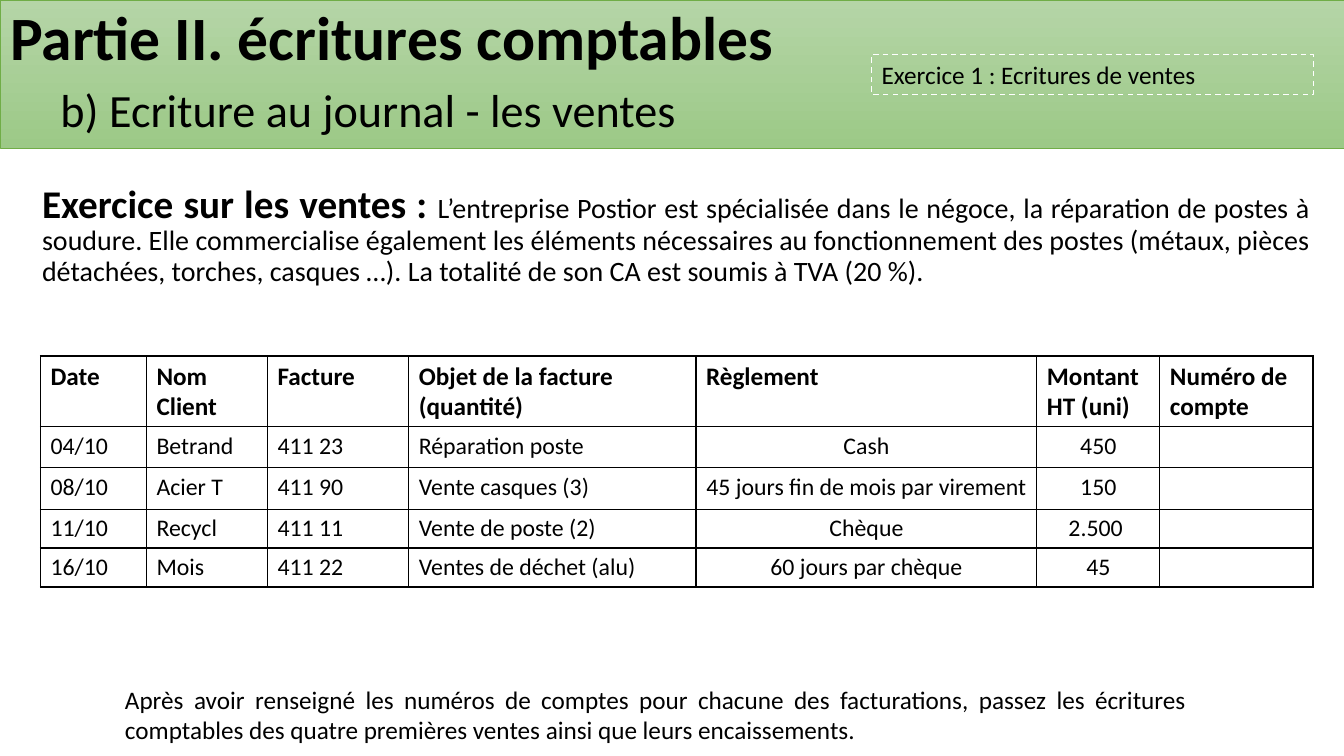
from lxml import etree
from pptx import Presentation
from pptx.dml.color import RGBColor
from pptx.enum.dml import MSO_LINE
from pptx.enum.shapes import MSO_SHAPE as SHAPE
from pptx.enum.text import MSO_ANCHOR as ANCHOR, PP_ALIGN as ALIGN
from pptx.oxml.ns import qn
from pptx.util import Cm, Pt

BLACK, WHITE, GREEN = "000000", "FFFFFF", "70AD47"
HEADER = ["Date", "Nom Client", "Facture", "Objet de la facture (quantité)",
          "Règlement", "Montant HT (uni)", "Numéro de compte"]
SALES = [
    ["04/10", "Betrand", "411 23", "Réparation poste", "Cash", "450", ""],
    ["08/10", "Acier T", "411 90", "Vente casques (3)",
     "45 jours fin de mois par virement", "150", ""],
    ["11/10", "Recycl", "411 11", "Vente de poste (2)", "Chèque", "2.500 ", ""],
    ["16/10", "Mois", "411 22", "Ventes de déchet (alu)",
     "60 jours par chèque", "45", ""],
]
COL_WIDTHS = [2.67, 3.05, 3.56, 7.24, 8.59, 3.1, 3.86]
ROW_HEIGHTS = [1.78, 1.04, 1.04, 0.98, 0.98]
CENTRED_COLS = (4, 5)


def rgb(value):
    return RGBColor.from_string(value)


def set_font(font, size, bold=False):
    font.name, font.size, font.bold = "Calibri", Pt(size), bold
    font.color.rgb = rgb(BLACK)


def add_run(p, text, size, bold=False):
    r = p.add_run()
    r.text = text
    set_font(r.font, size, bold)


def add_text_box(slide, left, top, width, height):
    tf = slide.shapes.add_textbox(Cm(left), Cm(top), Cm(width), Cm(height)).text_frame
    tf.word_wrap = True
    return tf.paragraphs[0]


def add_borders(cell):
    """Draw a 1 pt black line on each side of the cell."""
    tc_pr = cell._tc.get_or_add_tcPr()
    for i, side in enumerate(("a:lnL", "a:lnR", "a:lnT", "a:lnB")):
        ln = etree.Element(qn(side), w=str(Pt(1)))
        fill = etree.SubElement(ln, qn("a:solidFill"))
        etree.SubElement(fill, qn("a:srgbClr"), val=BLACK)
        tc_pr.insert(i, ln)


def build_banner(slide, left, top, width, height):
    # Title on a green gradient
    title = slide.shapes.title
    title.left, title.top = Cm(left), Cm(top)
    title.width, title.height = Cm(width), Cm(height)
    title.fill.gradient()
    title.fill.gradient_angle = 270
    for stop, position, colour in zip(title.fill.gradient_stops, (0, 1), ("B5D5A7", "9CC987")):
        stop.position, stop.color.rgb = position, rgb(colour)
    title.line.color.rgb = rgb(GREEN)
    title.line.width = Pt(0.5)
    tf = title.text_frame
    tf.vertical_anchor = ANCHOR.MIDDLE
    p = tf.paragraphs[0]
    p.alignment, p.line_spacing = ALIGN.LEFT, 0.9
    add_run(p, "Partie II. écritures comptables", 44, True)
    p.add_line_break()
    add_run(p, "\t", 44, True)
    add_run(p, "b) Ecriture au journal - les ventes", 33)

    # Dashed exercise label
    label = slide.shapes.add_shape(SHAPE.RECTANGLE, Cm(left + 21.97), Cm(top + 1.37),
                                   Cm(11.13), Cm(1.02))
    label.shadow.inherit = False
    label.fill.background()
    label.line.color.rgb = rgb(WHITE)
    label.line.width = Pt(1)
    label.line.dash_style = MSO_LINE.DASH
    p = label.text_frame.paragraphs[0]
    p.text, p.alignment = "Exercice 1 : Ecritures de ventes", ALIGN.LEFT
    set_font(p.font, 18)


def build_statement(slide, left, top, width, height):
    p = add_text_box(slide, left, top, width, height)
    p.alignment, p.line_spacing, p.space_before = ALIGN.JUSTIFY, 0.9, Pt(10)
    add_run(p, "Exercice sur les ventes : ", 28, True)
    add_run(p, "L’entreprise Postior est spécialisée dans le négoce, la réparation de "
               "postes à soudure. Elle commercialise également les éléments nécessaires au "
               "fonctionnement des postes (métaux, pièces détachées, torches, casques …). "
               "La totalité de son CA est soumis à TVA (20 %).", 20)


def build_sales_table(slide, left, top):
    rows = [HEADER] + SALES
    table = slide.shapes.add_table(len(rows), len(HEADER), Cm(left), Cm(top),
                                   Cm(sum(COL_WIDTHS)), Cm(sum(ROW_HEIGHTS))).table
    table.first_row = table.horz_banding = False
    for col, width in zip(table.columns, COL_WIDTHS):
        col.width = Cm(width)
    for i, (row, height) in enumerate(zip(rows, ROW_HEIGHTS)):
        table.rows[i].height = Cm(height)
        for j, text in enumerate(row):
            cell = table.cell(i, j)
            cell.fill.background()
            add_borders(cell)
            p = cell.text_frame.paragraphs[0]
            p.text = text
            set_font(p.font, 17 if i else 18, bold=i == 0)
            if i and j in CENTRED_COLS:
                p.alignment = ALIGN.CENTER


def build_instruction(slide, left, top, width, height):
    p = add_text_box(slide, left, top, width, height)
    p.text = ("Après avoir renseigné les numéros de comptes pour chacune des facturations, "
              "passez les écritures comptables des quatre premières ventes ainsi que "
              "leurs encaissements.")
    p.alignment = ALIGN.JUSTIFY
    set_font(p.font, 18)


def main():
    prs = Presentation()
    prs.slide_width, prs.slide_height = Cm(33.87), Cm(19.05)
    slide = prs.slides.add_slide(prs.slide_layouts[5])
    build_banner(slide, 0, 0, 33.87, 3.73)
    build_statement(slide, 0.81, 4.52, 32.46, 13.94)
    build_sales_table(slide, 1.02, 8.97)
    build_instruction(slide, 2.9, 17.12, 27.25, 1.8)
    prs.save("out.pptx")


if __name__ == "__main__":
    main()
